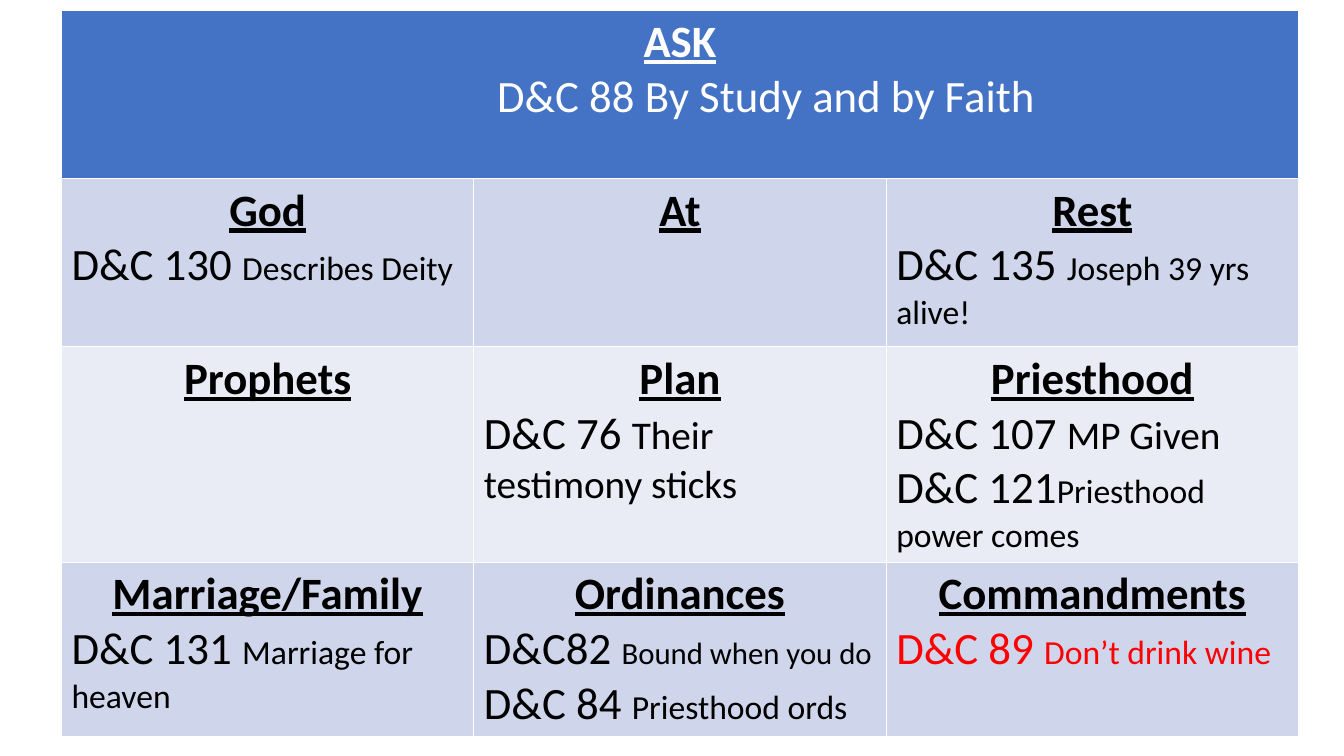
"""Builds a one-slide table of topics and matching sections."""
from pptx import Presentation
from pptx.dml.color import RGBColor
from pptx.enum.text import PP_ALIGN
from pptx.util import Inches, Pt

ROWS = [
    [("ASK", [[("D&C 88 By Study and by Faith", 32)]])],
    [
        ("God", [[("D&C 130 ", 32), ("Describes Deity", 24)]]),
        ("At", []),
        ("Rest", [[("D&C 135 ", 32), ("Joseph 39 yrs alive!", 24)]]),
    ],
    [
        ("Prophets", []),
        ("Plan", [[("D&C 76 ", 32), ("Their testimony sticks", 28)]]),
        ("Priesthood", [
            [("D&C 107 ", 32), ("MP Given", 28)],
            [("D&C 121", 32), ("Priesthood power comes", 24)],
        ]),
    ],
    [
        ("Marriage/Family", [[("D&C 131 ", 32), ("Marriage for heaven", 24)]]),
        ("Ordinances", [
            [("D&C82 ", 32), ("Bound when you do", 22)],
            [("D&C 84 ", 32), ("Priesthood ords", 24)],
        ]),
        ("Commandments", [[("D&C 89 ", 32), ("Don’t drink wine", 24)]]),
    ],
]
FILLS = ["4472C4", "CFD5EA", "E9EBF5", "CFD5EA"]


def shade(code):
    """Turn a hex string into a colour."""
    return RGBColor.from_string(code)


class Deck:
    """Holds the style and the current slide."""

    font = "Calibri"
    white, black, red = "FFFFFF", "000000", "FF0000"

    def __init__(self):
        """Start a wide deck with one bare slide."""
        self.show = Presentation()
        self.show.slide_width = Inches(13.33)
        self.show.slide_height = Inches(7.5)
        self.slide = self.show.slides.add_slide(self.show.slide_layouts[6])

    def run(self, para, text, size, ink, head=False):
        """Add one styled run; a head is bold and underlined."""
        run = para.add_run()
        run.text = text
        font = run.font
        font.name, font.size = self.font, Pt(size)
        font.bold = font.underline = head
        font.color.rgb = shade(ink)

    def cell(self, cell, title, lines, fill, ink, note):
        """Fill a cell with a centred head and its lines."""
        cell.fill.solid()
        cell.fill.fore_color.rgb = shade(fill)
        para = cell.text_frame.paragraphs[0]
        para.alignment = PP_ALIGN.CENTER
        self.run(para, title, 32, ink, True)
        for line in lines:
            para = cell.text_frame.add_paragraph()
            for text, size in line:
                self.run(para, text, size, note)
        return para

    def grid(self, rows, fills):
        """Add the table, with its first row merged across."""
        frame = self.slide.shapes.add_table(
            len(rows), 3, Inches(0.61), Inches(0.1), Inches(12.27), Inches(7.2))
        table = frame.table
        for row in table.rows:
            row.height = Inches(1.67)
        frame.height = Inches(7.2)
        table.cell(0, 0).merge(table.cell(0, 2))
        for r, (row, fill) in enumerate(zip(rows, fills)):
            ink = self.black if r else self.white
            for c, (title, lines) in enumerate(row):
                note = self.red if title == "Commandments" else ink
                para = self.cell(table.cell(r, c), title, lines, fill, ink, note)
                if r == 0:
                    para._p.get_or_add_pPr().set("marL", str(Inches(4.22)))


def main():
    """Build and save the deck."""
    deck = Deck()
    deck.grid(ROWS, FILLS)
    deck.show.save("out.pptx")


if __name__ == "__main__":
    main()
